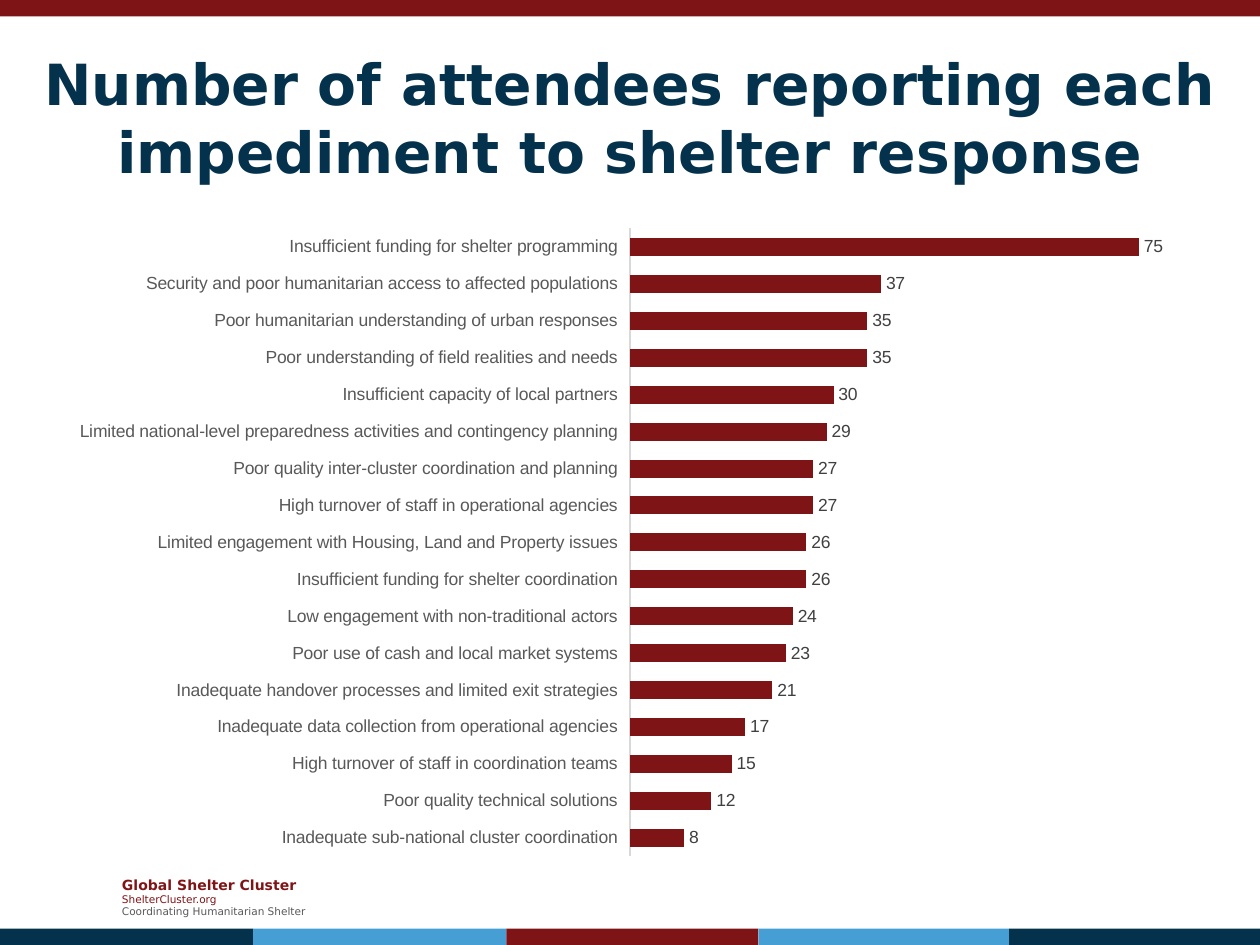
"""Build the slide on impediments to shelter response."""
from lxml import etree
from pptx import Presentation
from pptx.chart.data import CategoryChartData
from pptx.dml.color import RGBColor
from pptx.enum.chart import XL_CHART_TYPE, XL_LABEL_POSITION, XL_TICK_LABEL_POSITION, XL_TICK_MARK
from pptx.enum.shapes import MSO_SHAPE
from pptx.enum.text import MSO_ANCHOR, MSO_AUTO_SIZE, PP_ALIGN
from pptx.oxml.ns import qn
from pptx.util import Inches, Pt

BAR = XL_CHART_TYPE.BAR_CLUSTERED
OUT = XL_LABEL_POSITION.OUTSIDE_END
LOW = XL_TICK_LABEL_POSITION.LOW
NONE = XL_TICK_MARK.NONE
RECT = MSO_SHAPE.RECTANGLE
MID = MSO_ANCHOR.MIDDLE
FIXED = MSO_AUTO_SIZE.NONE
LEFT, CENTER = PP_ALIGN.LEFT, PP_ALIGN.CENTER

RED = RGBColor(0x7F, 0x14, 0x16)
NAVY = RGBColor(0x04, 0x31, 0x4C)
BLUE = RGBColor(0x45, 0x9F, 0xD5)
GREY = RGBColor(0x59, 0x59, 0x59)
DARK = RGBColor(0x40, 0x40, 0x40)
PALE = RGBColor(0xD9, 0xD9, 0xD9)
SANS, ARIAL = "DejaVu Sans", "Arial"

WIDE, HIGH, BAND = 10, 7.5, 0.13
TITLE = "Number of attendees reporting each impediment to shelter response"
FOOTER = [
    ("Global Shelter Cluster", 8, RED, True),
    ("ShelterCluster.org", 6, RED, False),
    ("Coordinating Humanitarian Shelter", 6, GREY, False),
]
EDGES = [0, 2.01, 4.02, 6.02, 8.01, WIDE]
HUES = [NAVY, BLUE, RED, BLUE, NAVY]
PLOT = {"x": 0.5, "y": 0.02, "w": 0.48, "h": 0.96}
COUNTS = [
    ("Insufficient funding for shelter programming", 75),
    ("Security and poor humanitarian access to affected populations", 37),
    ("Poor humanitarian understanding of urban responses", 35),
    ("Poor understanding of field realities and needs", 35),
    ("Insufficient capacity of local partners", 30),
    ("Limited national-level preparedness activities and contingency planning", 29),
    ("Poor quality inter-cluster coordination and planning", 27),
    ("High turnover of staff in operational agencies", 27),
    ("Limited engagement with Housing, Land and Property issues", 26),
    ("Insufficient funding for shelter coordination", 26),
    ("Low engagement with non-traditional actors", 24),
    ("Poor use of cash and local market systems", 23),
    ("Inadequate handover processes and limited exit strategies", 21),
    ("Inadequate data collection from operational agencies", 17),
    ("High turnover of staff in coordination teams", 15),
    ("Poor quality technical solutions", 12),
    ("Inadequate sub-national cluster coordination", 8),
]


def style(font, size, color, face, bold=False):
    font.size, font.name, font.bold = Pt(size), face, bold
    font.color.rgb = color


def write(para, text, size, color, bold=False, face=SANS, align=LEFT):
    para.alignment = align
    run = para.add_run()
    run.text = text
    style(run.font, size, color, face, bold)


def place(shape, *box):
    shape.left, shape.top, shape.width, shape.height = map(Inches, box)


def add_band(slide, left, top, width, color):
    band = slide.shapes.add_shape(RECT, *map(Inches, (left, top, width, BAND)))
    band.shadow.inherit = False
    band.fill.solid()
    band.fill.fore_color.rgb = color
    band.line.fill.background()


def add_footer(slide):
    frame = slide.shapes.add_textbox(*map(Inches, (0.87, 6.9, 1.73, 0.44))).text_frame
    frame.word_wrap = False
    frame.vertical_anchor = MID
    for i, (text, size, color, bold) in enumerate(FOOTER):
        para = frame.add_paragraph() if i else frame.paragraphs[0]
        write(para, text, size, color, bold)


def set_plot(chart):
    area = chart._chartSpace.chart.plotArea
    for old in area.findall(qn("c:layout")):
        area.remove(old)
    layout = etree.Element(qn("c:layout"))
    area.insert(0, layout)
    manual = etree.SubElement(layout, qn("c:manualLayout"))
    parts = {"layoutTarget": "inner", "xMode": "edge", "yMode": "edge", **PLOT}
    for tag, val in parts.items():
        etree.SubElement(manual, qn("c:" + tag)).set("val", str(val))


def add_bars(slide):
    data = CategoryChartData()
    names, vals = zip(*reversed(COUNTS))
    data.categories = names
    data.add_series("Series 1", vals)
    box = map(Inches, (0.51, 1.71, 8.98, 5.19))
    chart = slide.shapes.add_chart(BAR, *box, data).chart
    chart.has_legend = chart.has_title = False
    style(chart.font, 10, GREY, ARIAL)
    set_plot(chart)

    cats = chart.category_axis
    cats.major_tick_mark = cats.minor_tick_mark = NONE
    cats.tick_label_position = LOW
    cats.has_major_gridlines = False
    cats.format.line.color.rgb = PALE
    cats.format.line.width = Pt(0.75)
    style(cats.tick_labels.font, 10, GREY, ARIAL)
    axis = chart.value_axis
    axis.minimum_scale, axis.maximum_scale = 0, 80
    axis.has_major_gridlines = axis.visible = False

    plot = chart.plots[0]
    plot.gap_width = 105
    plot.vary_by_categories = False
    fill = plot.series[0].format.fill
    fill.solid()
    fill.fore_color.rgb = RED
    plot.has_data_labels = True
    labels = plot.data_labels
    labels.show_value = True
    labels.position = OUT
    style(labels.font, 10, DARK, ARIAL)


def main():
    deck = Presentation()
    deck.slide_width, deck.slide_height = Inches(WIDE), Inches(HIGH)
    slide = deck.slides.add_slide(deck.slide_layouts[5])
    add_footer(slide)
    add_band(slide, 0, 0, WIDE, RED)
    for left, right, hue in zip(EDGES, EDGES[1:], HUES):
        add_band(slide, left, HIGH - BAND, right - left, hue)
    title = slide.shapes.title
    place(title, 0, 0.3, WIDE, 1.25)
    frame = title.text_frame
    frame.word_wrap, frame.auto_size, frame.vertical_anchor = True, FIXED, MID
    write(frame.paragraphs[0], TITLE, 32.4, NAVY, bold=True, align=CENTER)
    add_bars(slide)
    deck.save("out.pptx")


if __name__ == "__main__":
    main()
